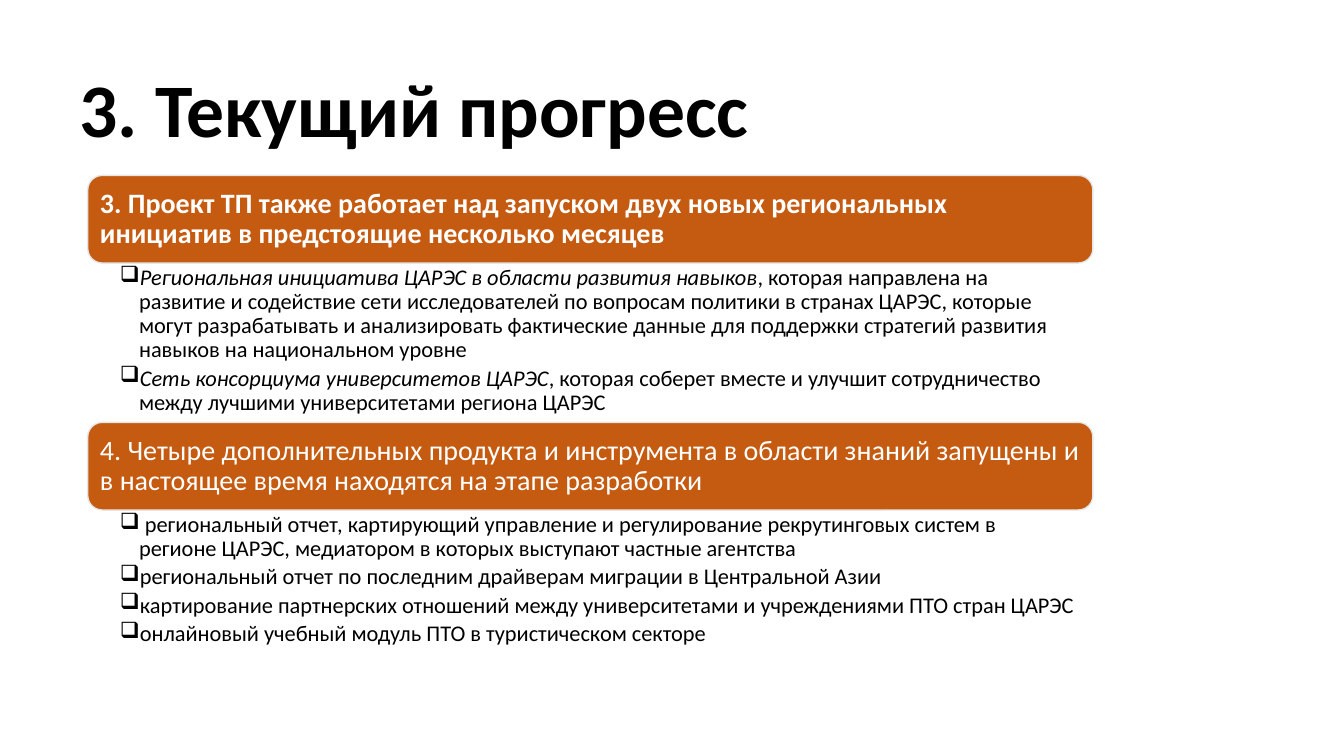
from lxml import etree
from pptx import Presentation
from pptx.dml.color import RGBColor
from pptx.enum.shapes import MSO_SHAPE
from pptx.enum.text import MSO_ANCHOR, PP_ALIGN
from pptx.oxml.ns import qn
from pptx.util import Inches, Pt

COLORS = {"text": "000000", "header": "C55A11", "border": "E7E6E6", "header_text": "FFFFFF"}
FONT = "Calibri"
LEFT, TOP, WIDTH = 0.87, 1.74, 9.97
HEADER_HEIGHT = 0.87
HANGING = 0.19

# Each section: header, header is bold, height of the list, items as (italic lead, rest)
SECTIONS = [
    (
        "3. Проект ТП также работает над запуском двух новых региональных "
        "инициатив в предстоящие несколько месяцев",
        True,
        1.58,
        [
            (
                "Региональная инициатива ЦАРЭС в области развития навыков",
                ", которая направлена на развитие и содействие сети исследователей "
                "по вопросам политики в странах ЦАРЭС, которые могут разрабатывать и "
                "анализировать фактические данные для поддержки стратегий развития "
                "навыков на национальном уровне",
            ),
            (
                "Сеть консорциума университетов ЦАРЭС",
                ", которая соберет вместе и улучшит сотрудничество между лучшими "
                "университетами региона ЦАРЭС",
            ),
        ],
    ),
    (
        "4. Четыре дополнительных продукта и инструмента в области знаний запущены "
        "и в настоящее время находятся на этапе разработки",
        False,
        1.45,
        [
            (
                "",
                " региональный отчет, картирующий управление и регулирование "
                "рекрутинговых систем в регионе ЦАРЭС, медиатором в которых выступают "
                "частные агентства",
            ),
            ("", "региональный отчет по последним драйверам миграции в Центральной Азии"),
            (
                "",
                "картирование партнерских отношений между университетами и "
                "учреждениями ПТО стран ЦАРЭС",
            ),
            ("", "онлайновый учебный модуль ПТО в туристическом секторе"),
        ],
    ),
]


def color(name):
    return RGBColor.from_string(COLORS[name])


def apply(target, values):
    for name, value in values.items():
        setattr(target, name, value)


def format_frame(frame, anchor, insets):
    """Wrap the text and set insets given as left, top, right, bottom."""
    sides = ("margin_left", "margin_top", "margin_right", "margin_bottom")
    apply(frame, {"word_wrap": True, "vertical_anchor": anchor})
    apply(frame, dict(zip(sides, map(Inches, insets))))


def add_run(paragraph, text, size, color_name, **styles):
    run = paragraph.add_run()
    run.text = text
    apply(run.font, {"name": FONT, "size": Pt(size), **styles})
    run.font.color.rgb = color(color_name)


def add_bullet(paragraph):
    properties = paragraph._p.get_or_add_pPr()
    properties.set("marL", str(Inches(HANGING)))
    properties.set("indent", str(-Inches(HANGING)))
    etree.SubElement(properties, qn("a:buChar")).set("char", "❑")


def add_title(slide, left, top, width, height):
    box = slide.shapes.add_textbox(*map(Inches, (left, top, width, height)))
    format_frame(box.text_frame, MSO_ANCHOR.MIDDLE, (0.1, 0.05, 0.1, 0.05))
    paragraph = box.text_frame.paragraphs[0]
    paragraph.line_spacing = 0.9
    add_run(paragraph, "3. Текущий прогресс", 54, "text", bold=True)


def add_header(slide, left, top, width, height, text, bold):
    shape = slide.shapes.add_shape(
        MSO_SHAPE.ROUNDED_RECTANGLE, *map(Inches, (left, top, width, height))
    )
    shape.shadow.inherit = False
    shape.fill.solid()
    shape.fill.fore_color.rgb = color("header")
    shape.line.color.rgb = color("border")
    shape.line.width = Pt(1)
    format_frame(shape.text_frame, MSO_ANCHOR.MIDDLE, (0.08,) * 4)
    paragraph = shape.text_frame.paragraphs[0]
    apply(paragraph, {"alignment": PP_ALIGN.LEFT, "line_spacing": 0.9})
    add_run(paragraph, text, 20, "header_text", bold=bold)


def add_list(slide, left, top, width, height, items):
    box = slide.shapes.add_textbox(*map(Inches, (left, top, width, height)))
    frame = box.text_frame
    format_frame(frame, MSO_ANCHOR.TOP, (0.32, 0.03, 0.16, 0.03))
    for index, (lead, rest) in enumerate(items):
        paragraph = frame.add_paragraph() if index else frame.paragraphs[0]
        add_bullet(paragraph)
        apply(paragraph, {"level": 1, "line_spacing": 0.9, "space_after": Pt(3)})
        if lead:
            add_run(paragraph, lead, 16, "text", italic=True)
        add_run(paragraph, rest, 16, "text")


def add_sections(slide, left, top, width):
    """Stack each header and its list downwards from the top."""
    for header, bold, list_height, items in SECTIONS:
        add_header(slide, left, top, width, HEADER_HEIGHT, header, bold)
        top += HEADER_HEIGHT
        add_list(slide, left, top, width, list_height, items)
        top += list_height


def main():
    presentation = Presentation()
    presentation.slide_width = Inches(13.33)
    presentation.slide_height = Inches(7.5)
    slide = presentation.slides.add_slide(presentation.slide_layouts[6])
    add_title(slide, 0.69, 0.4, 8.62, 1.45)
    add_sections(slide, LEFT, TOP, WIDTH)
    presentation.save("out.pptx")


if __name__ == "__main__":
    main()
